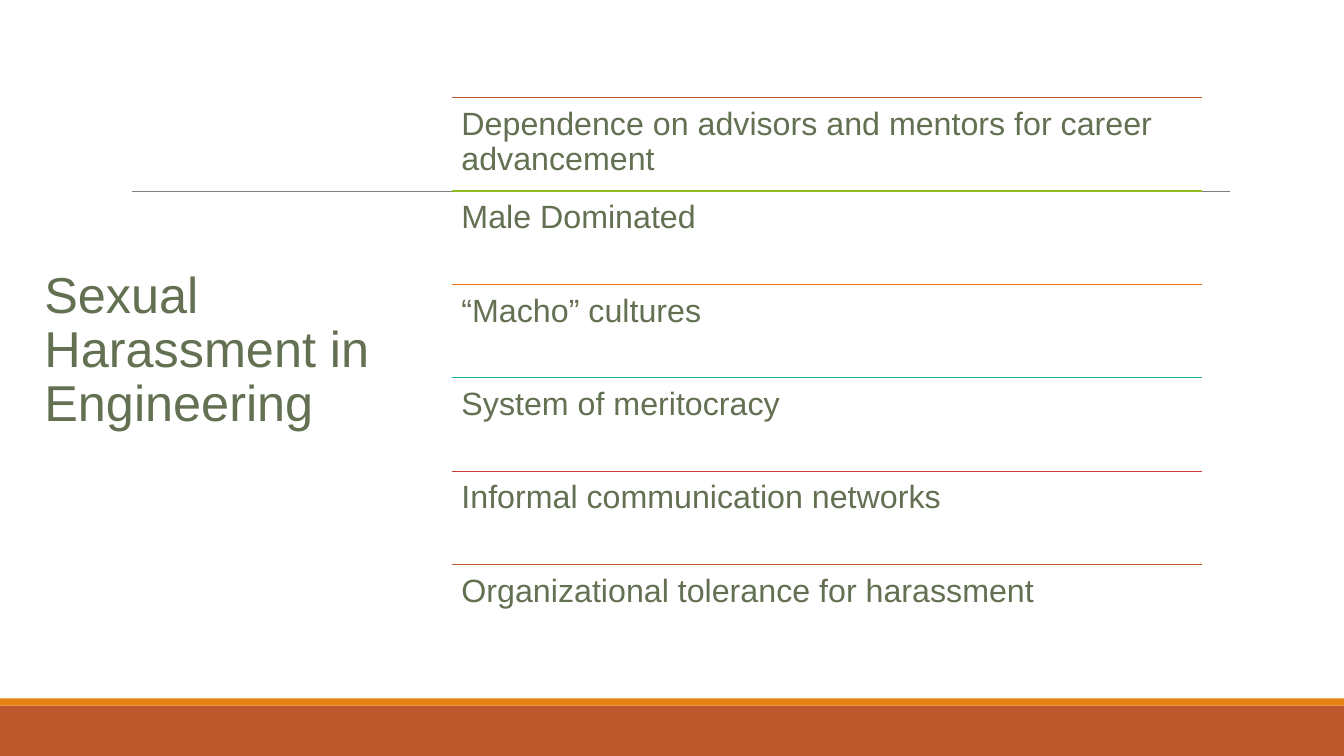
"""Build the slide on sexual harassment in engineering."""
import lxml.etree
import pptx
import pptx.dml.color
import pptx.enum.shapes
import pptx.enum.text
import pptx.oxml.ns
import pptx.util

Cm = pptx.util.Cm
Pt = pptx.util.Pt

TITLE = "Sexual Harassment in Engineering"
FACTORS = [
    ("Dependence on advisors and mentors for career advancement", "rust"),
    ("Male Dominated", "green"),
    ("“Macho” cultures", "orange"),
    ("System of meritocracy", "teal"),
    ("Informal communication networks", "red"),
    ("Organizational tolerance for harassment", "rust"),
]
COLOURS = {
    "text": "637052", "grey": "808080", "amber": "E48312", "rust": "BD582C",
    "green": "90BB20", "orange": "EE6E05", "teal": "17B39E", "red": "D5363A",
}
FONT = "Arial"
PAGE_WIDTH, PAGE_HEIGHT = 33.87, 19.05
FOOTER_TOP, STRIPE_TOP = 17.78, 17.6
LIST_LEFT, LIST_TOP, LIST_WIDTH, LIST_HEIGHT = 11.38, 2.46, 18.9, 14.12
ROW_HEIGHT = LIST_HEIGHT / len(FACTORS)


def colour(name):
    return pptx.dml.color.RGBColor.from_string(COLOURS[name])


def add_band(page, top, height, fill):
    band = page.shapes.add_shape(
        pptx.enum.shapes.MSO_SHAPE.RECTANGLE, 0, Cm(top), Cm(PAGE_WIDTH), Cm(height))
    band.shadow.inherit = False
    band.fill.solid()
    band.fill.fore_color.rgb = colour(fill)
    band.line.fill.background()


def add_rule(page, left, right, top, stroke, weight):
    rule = page.shapes.add_connector(
        pptx.enum.shapes.MSO_CONNECTOR.STRAIGHT, Cm(left), Cm(top), Cm(right), Cm(top))
    rule.line.color.rgb = colour(stroke)
    rule.line.width = Pt(weight)
    lxml.etree.SubElement(rule._element.spPr, pptx.oxml.ns.qn("a:effectLst"))


def add_text(page, wording, left, top, width, height, size, inset, anchor, space_after=0):
    box = page.shapes.add_textbox(Cm(left), Cm(top), Cm(width), Cm(height))
    frame = box.text_frame
    frame.word_wrap = True
    frame.vertical_anchor = anchor
    frame.margin_left = frame.margin_right = Cm(0.25)
    frame.margin_top = frame.margin_bottom = Cm(inset)
    para = frame.paragraphs[0]
    para.text = wording
    para.line_spacing = 0.9
    para.space_after = Pt(space_after)
    para.font.name = FONT
    para.font.size = Pt(size)
    para.font.color.rgb = colour("text")


def main():
    deck = pptx.Presentation()
    deck.slide_width, deck.slide_height = Cm(PAGE_WIDTH), Cm(PAGE_HEIGHT)
    page = deck.slides.add_slide(deck.slide_layouts[6])
    anchors = pptx.enum.text.MSO_ANCHOR

    add_band(page, FOOTER_TOP, PAGE_HEIGHT - FOOTER_TOP, "rust")
    add_band(page, STRIPE_TOP, FOOTER_TOP - STRIPE_TOP, "amber")
    add_rule(page, 3.33, 31, LIST_TOP + ROW_HEIGHT, "grey", 0.5)
    add_text(page, TITLE, 0.87, LIST_TOP, 10.51, 12.78, 36, 0.13, anchors.MIDDLE, 6)

    for row, (factor, stroke) in enumerate(FACTORS):
        top = LIST_TOP + row * ROW_HEIGHT
        add_rule(page, LIST_LEFT, LIST_LEFT + LIST_WIDTH, top, stroke, 0.85)
        add_text(page, factor, LIST_LEFT, top, LIST_WIDTH, ROW_HEIGHT, 23, 0.25, anchors.TOP)

    deck.save("out.pptx")


if __name__ == "__main__":
    main()
